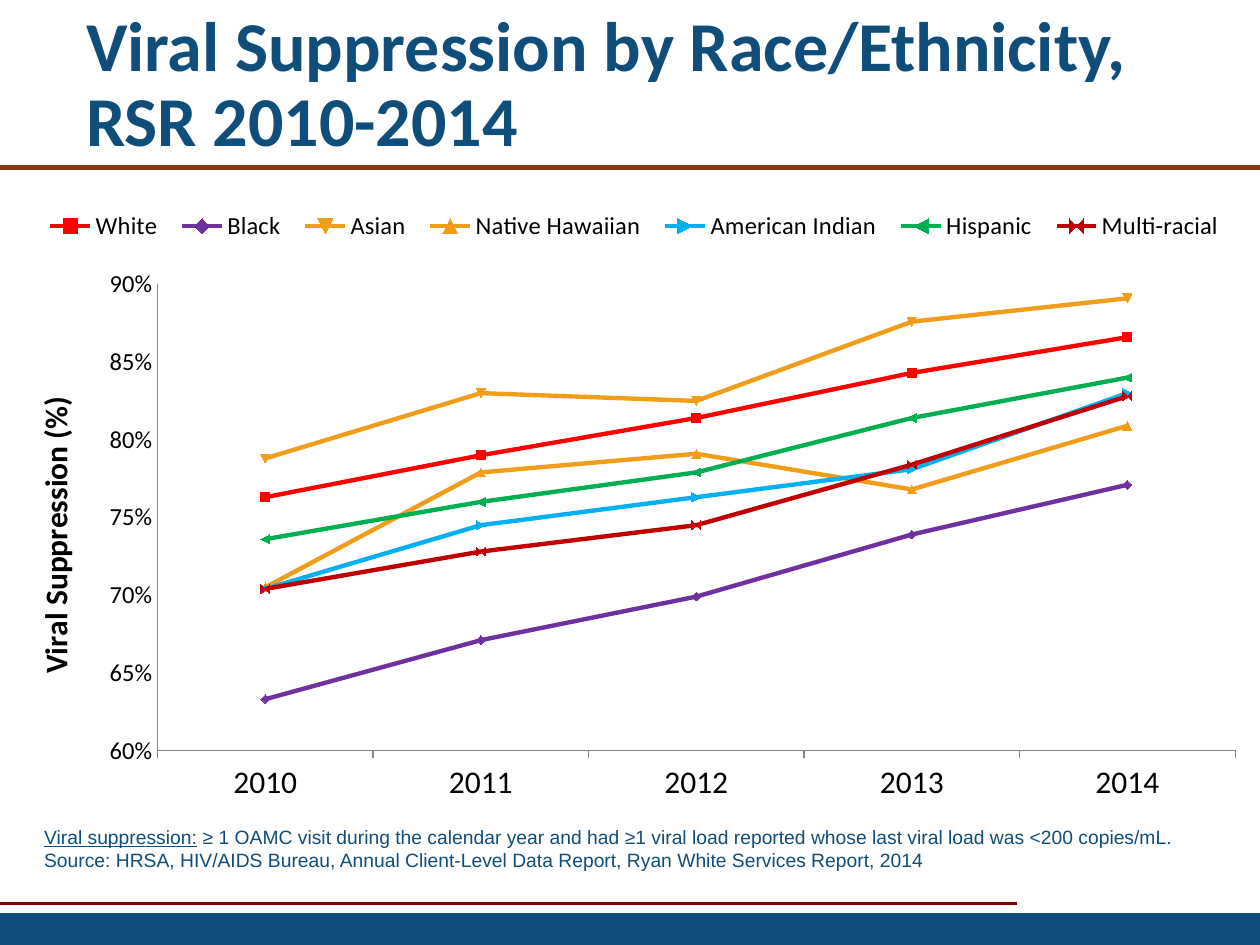
"""Build a slide with a line chart of viral suppression by race and ethnicity."""
from lxml.etree import SubElement as Sub
from pptx import Presentation
from pptx.chart.data import CategoryChartData as Data
from pptx.dml.color import RGBColor as RGB
from pptx.enum.chart import XL_CHART_TYPE as Kind, XL_LEGEND_POSITION as Spot, XL_TICK_MARK as Tick
from pptx.enum.shapes import MSO_CONNECTOR as Link, MSO_SHAPE as Shape
from pptx.enum.text import MSO_ANCHOR as Anchor, MSO_AUTO_SIZE as Auto, PP_ALIGN as Align
from pptx.oxml.ns import qn
from pptx.util import Cm, Pt

TITLE = "Viral Suppression by Race/Ethnicity, RSR 2010-2014"
YEARS = ["2010", "2011", "2012", "2013", "2014"]
SERIES = [
    ("White", "FF0000", (0.763, 0.79, 0.814, 0.843, 0.866)),
    ("Black", "7030A0", (0.633, 0.671, 0.699, 0.739, 0.771)),
    ("Asian", "F19D19", (0.788, 0.83, 0.825, 0.876, 0.891)),
    ("Native Hawaiian", "F19D19", (0.705, 0.779, 0.791, 0.768, 0.809)),
    ("American Indian", "00B0F0", (0.704, 0.745, 0.763, 0.781, 0.83)),
    ("Hispanic", "00B050", (0.736, 0.76, 0.779, 0.814, 0.84)),
    ("Multi-racial", "C00000", (0.704, 0.728, 0.745, 0.784, 0.828)),
]
NOTES = [
    [("Viral suppression:", True),
     (" ≥ 1 OAMC visit during the calendar year and had ≥1 viral load reported "
      "whose last viral load was <200 copies/mL.", False)],
    [("Source: HRSA, HIV/AIDS Bureau, Annual Client-Level Data Report, "
      "Ryan White Services Report, 2014", False)],
]
RULES = [(0, 20.5, 18.21, "800000", 1.5), (0, 25.4, 3.38, "893713", 3)]
BLUE = "0F4D7B"
HEAD = {"name": "Calibri", "size": Pt(40), "bold": True}
NOTE = {"name": "Arial", "size": Pt(11)}
BASE = {"name": "Calibri", "size": Pt(18), "bold": False}
SMALL = {"name": "Calibri", "size": Pt(14), "bold": False}
AXIS = {"name": "Calibri", "size": Pt(18), "bold": True}
SCALE = {"minimum_scale": 0.6, "maximum_scale": 0.9, "major_unit": 0.05,
         "has_major_gridlines": False, "major_tick_mark": Tick.NONE}


def tint(part, color):
    """Give a fill or line a solid colour."""
    part.solid()
    part.fore_color.rgb = RGB.from_string(color)


def style(font, form, color="000000"):
    """Apply format values and a colour to a font."""
    for key, value in form.items():
        setattr(font, key, value)
    tint(font.fill, color)


def place(item, *box):
    """Move and size an item in centimetres."""
    for key, value in zip(("left", "top", "width", "height"), box):
        setattr(item, key, Cm(value))


def layout(node, inner, *box):
    """Set a manual layout on a chart part."""
    spot = node.find(qn("c:layout"))
    if spot is None:
        spot = Sub(node, qn("c:layout"))
        node.insert(1 if inner is False else 0, spot)
    man = Sub(spot, qn("c:manualLayout"))
    pairs = [("layoutTarget", "inner")] if inner else []
    pairs += [("xMode", "edge"), ("yMode", "edge"), *zip("xywh", box)]
    for tag, value in pairs:
        Sub(man, qn("c:" + tag)).set("val", str(value))


def rule(slide, left, right, top, color, width):
    """Draw a horizontal rule."""
    line = slide.shapes.add_connector(Link.STRAIGHT, Cm(left), Cm(top), Cm(right), Cm(top))
    tint(line.line.fill, color)
    line.line.width = Pt(width)
    Sub(line._element.spPr, qn("a:effectLst"))


def graph(slide):
    """Add the line chart."""
    data = Data(number_format="0.0%")
    data.categories = YEARS
    for name, _, vals in SERIES:
        data.add_series(name, vals)
    box = map(Cm, (0.43, 2.97, 24.97, 13.82))
    chart = slide.shapes.add_chart(Kind.LINE_MARKERS, *box, data).chart
    style(chart.font, BASE)
    chart.has_title = False
    chart.has_legend = True
    key = chart.legend
    key.position, key.include_in_layout = Spot.TOP, False
    style(key.font, SMALL)
    layout(key._element, False, 0.01, 0.08, 0.97, 0.07)
    plot = chart.plots[0]
    plot.vary_by_categories = False
    layout(chart._chartSpace.chart.plotArea, True, 0.11, 0.2, 0.87, 0.68)
    for line, (_, color, _) in zip(plot.series, SERIES):
        line.smooth = False
        line.format.line.width = Pt(2.5)
        line.marker.size = 5
        mark = line.marker.format
        for fill in (line.format.line.fill, mark.fill, mark.line.fill):
            tint(fill, color)
    cat, val = chart.category_axis, chart.value_axis
    cat.major_tick_mark = Tick.OUTSIDE
    for name, value in SCALE.items():
        setattr(val, name, value)
    val.tick_labels.number_format = "0%"
    val.tick_labels.number_format_is_linked = False
    for axis, form in ((cat, BASE), (val, SMALL)):
        style(axis.tick_labels.font, form)
        tint(axis.format.line.fill, "868686")
    para = val.axis_title.text_frame.paragraphs[0]
    run = para.add_run()
    run.text = "Viral Suppression (%)"
    style(run.font, AXIS)


def main():
    """Build and save the slide."""
    deck = Presentation()
    deck.slide_width, deck.slide_height = Cm(25.4), Cm(19.05)
    slide = deck.slides.add_slide(deck.slide_layouts[5])
    for left, right, top, color, width in RULES:
        rule(slide, left, right, top, color, width)

    bar = slide.shapes.add_shape(Shape.RECTANGLE, Cm(0), Cm(18.41), Cm(25.4), Cm(0.64))
    bar.shadow.inherit = False
    tint(bar.fill, BLUE)
    bar.line.fill.background()
    graph(slide)

    title = slide.shapes.title
    place(title, 1.48, 0.71, 23.92, 2.06)
    frame = title.text_frame
    frame.text = TITLE
    frame.auto_size, frame.vertical_anchor = Auto.NONE, Anchor.MIDDLE
    para = frame.paragraphs[0]
    para.alignment, para.line_spacing = Align.LEFT, 0.9
    style(para.runs[0].font, HEAD, BLUE)

    frame = slide.shapes.add_textbox(Cm(0.64), Cm(16.51), Cm(24.23), Cm(1.19)).text_frame
    frame.word_wrap = True
    for index, parts in enumerate(NOTES):
        para = frame.add_paragraph() if index else frame.paragraphs[0]
        for text, under in parts:
            run = para.add_run()
            run.text = text
            style(run.font, {**NOTE, "underline": under}, BLUE)
    deck.save("out.pptx")


if __name__ == "__main__":
    main()
